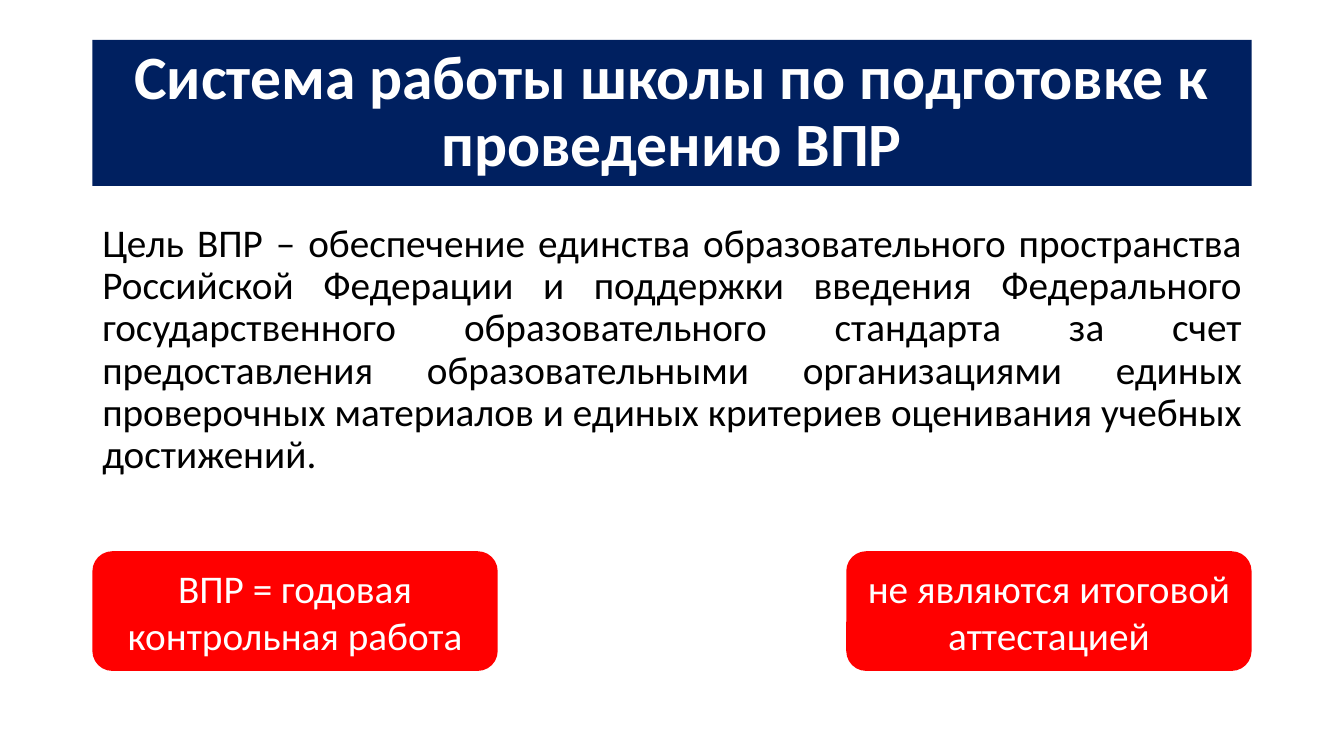
from pptx import Presentation
from pptx.dml.color import RGBColor
from pptx.enum.shapes import MSO_SHAPE
from pptx.enum.text import MSO_ANCHOR, MSO_AUTO_SIZE, PP_ALIGN
from pptx.util import Pt

PX = 9525
NAVY = RGBColor(0x00, 0x20, 0x60)
RED = RGBColor(0xFF, 0x00, 0x00)
WHITE = RGBColor(0xFF, 0xFF, 0xFF)
BLACK = RGBColor(0x00, 0x00, 0x00)
ROUNDED = MSO_SHAPE.ROUNDED_RECTANGLE
MIDDLE = MSO_ANCHOR.MIDDLE
NO_AUTOFIT = MSO_AUTO_SIZE.NONE
CENTER = PP_ALIGN.CENTER
JUSTIFY = PP_ALIGN.JUSTIFY

LEFT = 88
WIDTH = 1104
CARD_WIDTH = 386


def place(shape, left, top, width, height):
    shape.left, shape.top = left * PX, top * PX
    shape.width, shape.height = width * PX, height * PX


def write(shape, text, size, color, alignment, line_spacing=1.0, bold=False):
    frame = shape.text_frame
    frame.text = text
    frame.word_wrap = True
    frame.auto_size = NO_AUTOFIT
    paragraph = frame.paragraphs[0]
    paragraph.alignment = alignment
    paragraph.line_spacing = line_spacing
    font = paragraph.runs[0].font
    font.name = "Calibri"
    font.size = Pt(size)
    font.bold = bold
    font.color.rgb = color


presentation = Presentation()
presentation.slide_width = 1280 * PX
presentation.slide_height = 720 * PX
slide = presentation.slides.add_slide(presentation.slide_layouts[5])

title = slide.shapes.title
place(title, LEFT, 38, WIDTH, 139)
title.fill.solid()
title.fill.fore_color.rgb = NAVY
write(title, "Система работы школы по подготовке к проведению ВПР", 44, WHITE, CENTER, 0.9, True)
title.text_frame.vertical_anchor = MIDDLE

goal = slide.shapes.add_textbox(LEFT * PX, 208 * PX, WIDTH * PX, 343 * PX)
write(
    goal,
    "Цель ВПР – обеспечение единства образовательного пространства "
    "Российской Федерации и поддержки введения Федерального "
    "государственного образовательного стандарта за счет "
    "предоставления образовательными организациями единых "
    "проверочных материалов и единых критериев оценивания учебных "
    "достижений.",
    28, BLACK, JUSTIFY, 0.9,
)

cards = [
    (LEFT, "ВПР = годовая контрольная работа"),
    (LEFT + WIDTH - CARD_WIDTH, "не являются итоговой аттестацией"),
]
for left, text in cards:
    card = slide.shapes.add_shape(ROUNDED, left * PX, 525 * PX, CARD_WIDTH * PX, 114 * PX)
    card.shadow.inherit = False
    card.fill.solid()
    card.fill.fore_color.rgb = RED
    card.line.fill.background()
    write(card, text, 28, WHITE, CENTER)
    card.text_frame.vertical_anchor = MIDDLE

presentation.save("out.pptx")
